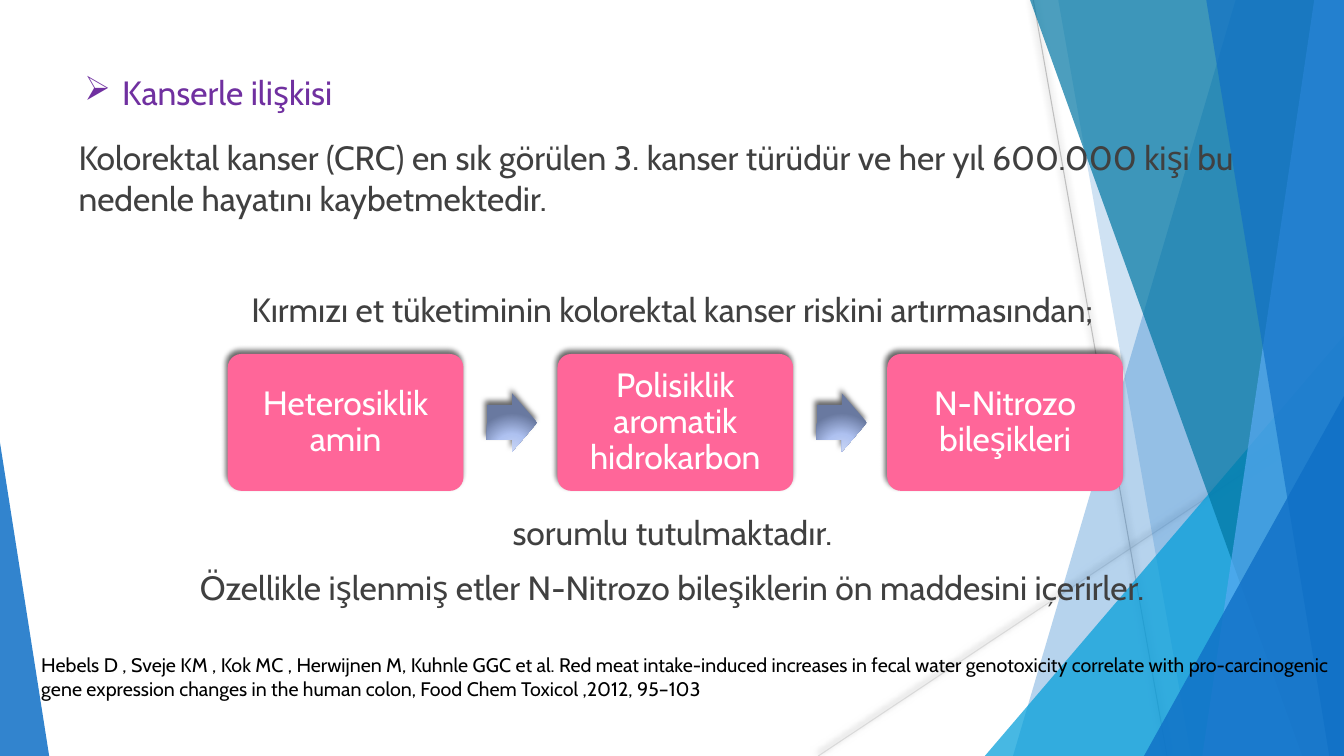
from lxml.etree import SubElement
from pptx import Presentation
from pptx.dml.color import RGBColor
from pptx.enum.shapes import MSO_CONNECTOR, MSO_SHAPE
from pptx.enum.text import MSO_ANCHOR, PP_ALIGN
from pptx.oxml import parse_xml
from pptx.oxml.ns import nsdecls, qn
from pptx.util import Cm, Pt

FONT = "Cabin"
WHITE = RGBColor(0xFF, 0xFF, 0xFF)
BLACK = RGBColor(0, 0, 0)
GREY = RGBColor(0x40, 0x40, 0x40)
PURPLE = RGBColor(0x70, 0x30, 0xA0)
PINK = RGBColor(0xFF, 0x66, 0x99)
BLUE = RGBColor(0x0F, 0x6F, 0xC6)
CYAN = RGBColor(0x00, 0x9D, 0xD9)
TEAL = RGBColor(0x00, 0x76, 0xA3)
SKY = RGBColor(0x59, 0xAA, 0xF2)
PALE_LINE = RGBColor(0xD9, 0xD9, 0xD9)
MID_LINE = RGBColor(0xBF, 0xBF, 0xBF)

WIDTH, HEIGHT = 33.87, 19.05


def cast_shadow(shape, opacity, blur, distance):
    """Add a black shadow falling to the upper left; opacity in percent, lengths in points."""
    properties = shape._element.spPr
    for effects in properties.findall(qn("a:effectLst")):
        properties.remove(effects)
    properties.append(parse_xml(
        f'<a:effectLst {nsdecls("a")}><a:outerShdw blurRad="{Pt(blur)}" dist="{Pt(distance)}" '
        f'dir="14700000" rotWithShape="0"><a:srgbClr val="000000">'
        f'<a:alpha val="{opacity * 1000}"/></a:srgbClr></a:outerShdw></a:effectLst>'))


def write(paragraph, text, color, size=24):
    paragraph.text = text
    paragraph.font.name = FONT
    paragraph.font.size = Pt(size)
    paragraph.font.color.rgb = color


prs = Presentation()
prs.slide_width, prs.slide_height = Cm(WIDTH), Cm(HEIGHT)
slide = prs.slides.add_slide(prs.slide_layouts[6])
shapes = slide.shapes

# Background: two thin lines, then translucent facets
for x1, y1, x2, y2, color in [
    (20.62, HEIGHT, WIDTH, 10.24, PALE_LINE),
    (26.04, 0, 29.41, HEIGHT, MID_LINE),
]:
    ray = shapes.add_connector(MSO_CONNECTOR.STRAIGHT, Cm(x1), Cm(y1), Cm(x2), Cm(y2))
    ray.line.color.rgb = color
    ray.line.width = Pt(0.75)
    cast_shadow(ray, 50, 5, 2)

top_right, bottom_right = (WIDTH, 0), (WIDTH, HEIGHT)
facets = [
    (BLUE, 30, [(31.14, 0), (25.53, HEIGHT), bottom_right, top_right]),
    (BLUE, 20, [(26.67, 0), (30.02, HEIGHT), bottom_right, top_right]),
    (CYAN, 72, [(24.82, HEIGHT), (WIDTH, 8.46), bottom_right]),
    (TEAL, 70, [(25.96, 0), (32.82, HEIGHT), bottom_right, top_right]),
    (SKY, 70, [(33.12, 0), (30.3, HEIGHT), bottom_right, top_right]),
    (BLUE, 65, [(30.4, 0), (33.5, HEIGHT), bottom_right, top_right]),
    (BLUE, 80, [(28.83, HEIGHT), (WIDTH, 9.98), bottom_right]),
    (BLUE, 85, [(0, 11.15), (1.24, HEIGHT), (0, HEIGHT)]),
]
for color, opacity, corners in facets:
    points = [(Cm(x), Cm(y)) for x, y in corners]
    outline = shapes.build_freeform(*points[0])
    outline.add_line_segments(points[1:], close=True)
    facet = outline.convert_to_shape()
    facet.fill.solid()
    facet.fill.fore_color.rgb = color
    tint = facet._element.spPr.find(".//" + qn("a:srgbClr"))
    SubElement(tint, qn("a:alpha"), val=str(opacity * 1000))
    facet.line.fill.background()
    facet.shadow.inherit = False

# Heading with an arrowhead bullet
heading = shapes.add_textbox(Cm(1.88), Cm(1.7), Cm(23.88), Cm(1.5)).text_frame
heading.word_wrap = True
heading_line = heading.paragraphs[0]
bullet = heading_line._p.get_or_add_pPr()
bullet.set("marL", str(Cm(0.95)))
bullet.set("indent", str(-Cm(0.95)))
SubElement(SubElement(bullet, qn("a:buClr")), qn("a:srgbClr"), val=str(PURPLE))
SubElement(bullet, qn("a:buChar"), char="➢")
write(heading_line, "Kanserle ilişkisi", PURPLE)

# Body text, spaced to leave room for the chain of boxes
body = shapes.add_textbox(Cm(1.73), Cm(3.33), Cm(30.43), Cm(13.69)).text_frame
body.word_wrap = True
statements = [
    ("Kolorektal kanser (CRC) en sık görülen 3. kanser türüdür ve her yıl 600.000 kişi bu "
     "nedenle hayatını kaybetmektedir.", PP_ALIGN.LEFT, 0),
    ("Kırmızı et tüketiminin kolorektal kanser riskini artırmasından;", PP_ALIGN.CENTER, 44.5),
    ("sorumlu tutulmaktadır.", PP_ALIGN.CENTER, 124.5),
    ("Özellikle işlenmiş etler N-Nitrozo bileşiklerin ön maddesini içerirler.",
     PP_ALIGN.CENTER, 5),
]
for i, (text, alignment, space_before) in enumerate(statements):
    statement = body.add_paragraph() if i else body.paragraphs[0]
    statement.alignment = alignment
    statement.space_before = Pt(space_before)
    statement.space_after = Pt(6)
    write(statement, text, GREY)

# Chain of compounds
CHAIN_LEFT, CHAIN_STEP = 5.74, 8.31
compounds = ["Heterosiklik amin", "Polisiklik aromatik hidrokarbon", "N-Nitrozo bileşikleri"]
for i, name in enumerate(compounds):
    left = CHAIN_LEFT + i * CHAIN_STEP
    compound = shapes.add_shape(
        MSO_SHAPE.ROUNDED_RECTANGLE, Cm(left), Cm(8.92), Cm(5.94), Cm(3.45))
    compound.adjustments[0] = 0.1
    compound.fill.solid()
    compound.fill.fore_color.rgb = PINK
    compound.line.fill.background()
    cast_shadow(compound, 60, 4, 3)
    label = compound.text_frame
    label.word_wrap = True
    label.vertical_anchor = MSO_ANCHOR.MIDDLE
    label.margin_left = label.margin_right = label.margin_top = label.margin_bottom = Cm(0.25)
    label.paragraphs[0].alignment = PP_ALIGN.CENTER
    label.paragraphs[0].line_spacing = 0.9
    write(label.paragraphs[0], name, WHITE)

    if i < len(compounds) - 1:
        arrow = shapes.add_shape(
            MSO_SHAPE.RIGHT_ARROW, Cm(left + 6.53), Cm(9.91), Cm(1.27), Cm(1.47))
        arrow.adjustments[0] = 0.6
        arrow.adjustments[1] = 0.5
        arrow.line.fill.background()
        arrow._element.spPr.find(qn("a:prstGeom")).addnext(parse_xml(
            f'<a:gradFill {nsdecls("a")} rotWithShape="1"><a:gsLst>'
            '<a:gs pos="0"><a:srgbClr val="CAD6F4"/></a:gs>'
            '<a:gs pos="46000"><a:srgbClr val="AEC1F0"/></a:gs>'
            '<a:gs pos="100000"><a:srgbClr val="6979A0"/></a:gs></a:gsLst>'
            '<a:path path="circle"><a:fillToRect l="50000" t="155000" r="50000" b="-55000"/>'
            '</a:path></a:gradFill>'))
        cast_shadow(arrow, 60, 4, 3)

# Reference
reference = shapes.add_textbox(Cm(0.79), Cm(16.33), Cm(33.07), Cm(2.06)).text_frame
reference.word_wrap = True
write(reference.paragraphs[0],
      "Hebels D , Sveje KM , Kok MC , Herwijnen M, Kuhnle GGC et al. Red meat intake-induced "
      "increases in fecal water genotoxicity correlate with pro-carcinogenic gene expression "
      "changes in the human colon, Food Chem Toxicol ,2012, 95–103", BLACK, 14)

prs.save("out.pptx")
